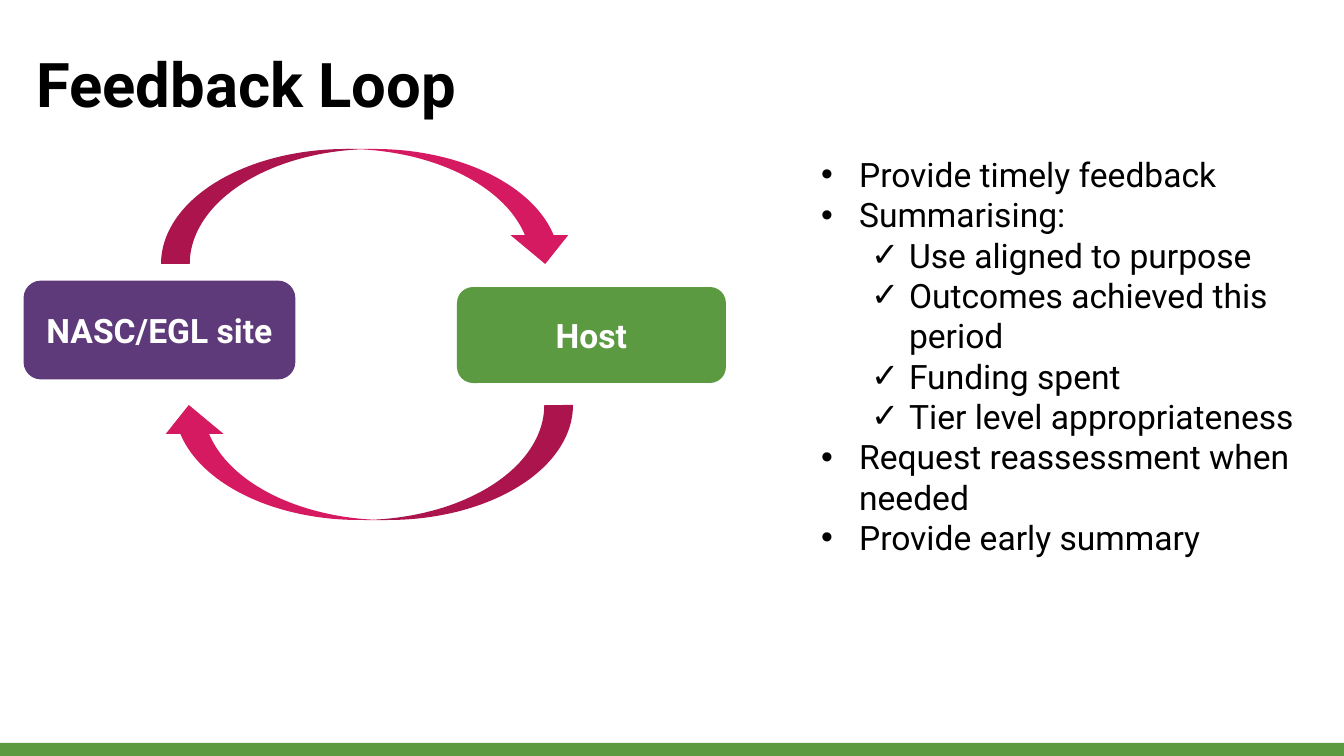
from pptx import Presentation
from pptx.dml.color import RGBColor
from pptx.enum.shapes import MSO_SHAPE
from pptx.enum.text import MSO_ANCHOR, MSO_AUTO_SIZE, PP_ALIGN
from pptx.oxml.ns import qn
from pptx.util import Pt
from lxml.etree import SubElement

PX = 914400 / 100.8
THEME = {
    "font": "Roboto", "head": 44, "text": 24,
    "ink": "000000", "white": "FFFFFF",
    "green": "5C9A42", "plum": "5F3A7A", "pink": "D61A61",
}


def add_run(para, text, size, color, bold=False):
    run = para.add_run()
    run.text = text
    run.font.name = THEME["font"]
    run.font.size = Pt(THEME[size])
    run.font.bold = bold
    run.font.color.rgb = RGBColor.from_string(THEME[color])


def add_block(kind, box, color):
    shape = slide.shapes.add_shape(kind, *[round(n * PX) for n in box])
    shape.shadow.inherit = False
    shape.fill.solid()
    shape.fill.fore_color.rgb = RGBColor.from_string(THEME[color])
    shape.line.fill.background()
    return shape


# Slide
deck = Presentation()
deck.slide_width = round(1344 * PX)
deck.slide_height = round(756 * PX)
slide = deck.slides.add_slide(deck.slide_layouts[1])
title, body = slide.placeholders

# Footer bar
add_block(MSO_SHAPE.RECTANGLE, (0, 743, 1344, 13), "green")

# Title and list frames
for holder, box in ((title, (26, 41, 1292, 72)), (body, (811, 149, 508, 458))):
    holder.left, holder.top, holder.width, holder.height = [round(n * PX) for n in box]
    holder.text_frame.word_wrap = True
    holder.text_frame.vertical_anchor = MSO_ANCHOR.TOP
title.text_frame.auto_size = MSO_AUTO_SIZE.NONE
body.text_frame.auto_size = MSO_AUTO_SIZE.SHAPE_TO_FIT_TEXT

# Title
head = title.text_frame.paragraphs[0]
head.alignment = PP_ALIGN.LEFT
add_run(head, "Feedback Loop", "head", "ink", True)

# List: level and text
points = [
    (0, "Provide timely feedback"),
    (0, "Summarising:"),
    (1, "Use aligned to purpose"),
    (1, "Outcomes achieved this period"),
    (1, "Funding spent"),
    (1, "Tier level appropriateness"),
    (0, "Request reassessment when needed"),
    (0, "Provide early summary"),
]
frame = body.text_frame
for i, (level, text) in enumerate(points):
    para = frame.add_paragraph() if i else frame.paragraphs[0]
    para.level = level
    props = para._p.get_or_add_pPr()
    props.set("marL", str(round((38 + 50 * level) * PX)))
    props.set("indent", str(round(-38 * PX)))
    SubElement(props, qn("a:buFont"), typeface="Arial")
    SubElement(props, qn("a:buChar"), char="•✓"[level])
    para.space_before = Pt(0)
    add_run(para, text, "text", "ink")

# Parties in the loop
parties = [
    ("NASC/EGL site", (25, 282, 269, 96), "plum"),
    ("Host", (457, 287, 269, 96), "green"),
]
for name, box, color in parties:
    party = add_block(MSO_SHAPE.ROUNDED_RECTANGLE, box, color)
    if color == "plum":
        party.line.color.rgb = RGBColor.from_string(THEME[color])
        party.line.width = Pt(2)
    party.text_frame.word_wrap = True
    party.text_frame.vertical_anchor = MSO_ANCHOR.MIDDLE
    label = party.text_frame.paragraphs[0]
    label.alignment = PP_ALIGN.CENTER
    add_run(label, name, "text", "white", True)

# Loop arrows: out above, back below
for left, top, turn in ((161, 149, 0), (160, 405, 180)):
    arrow = add_block(MSO_SHAPE.CURVED_DOWN_ARROW, (left, top, 413, 115), "pink")
    arrow.rotation = turn

deck.save("out.pptx")
